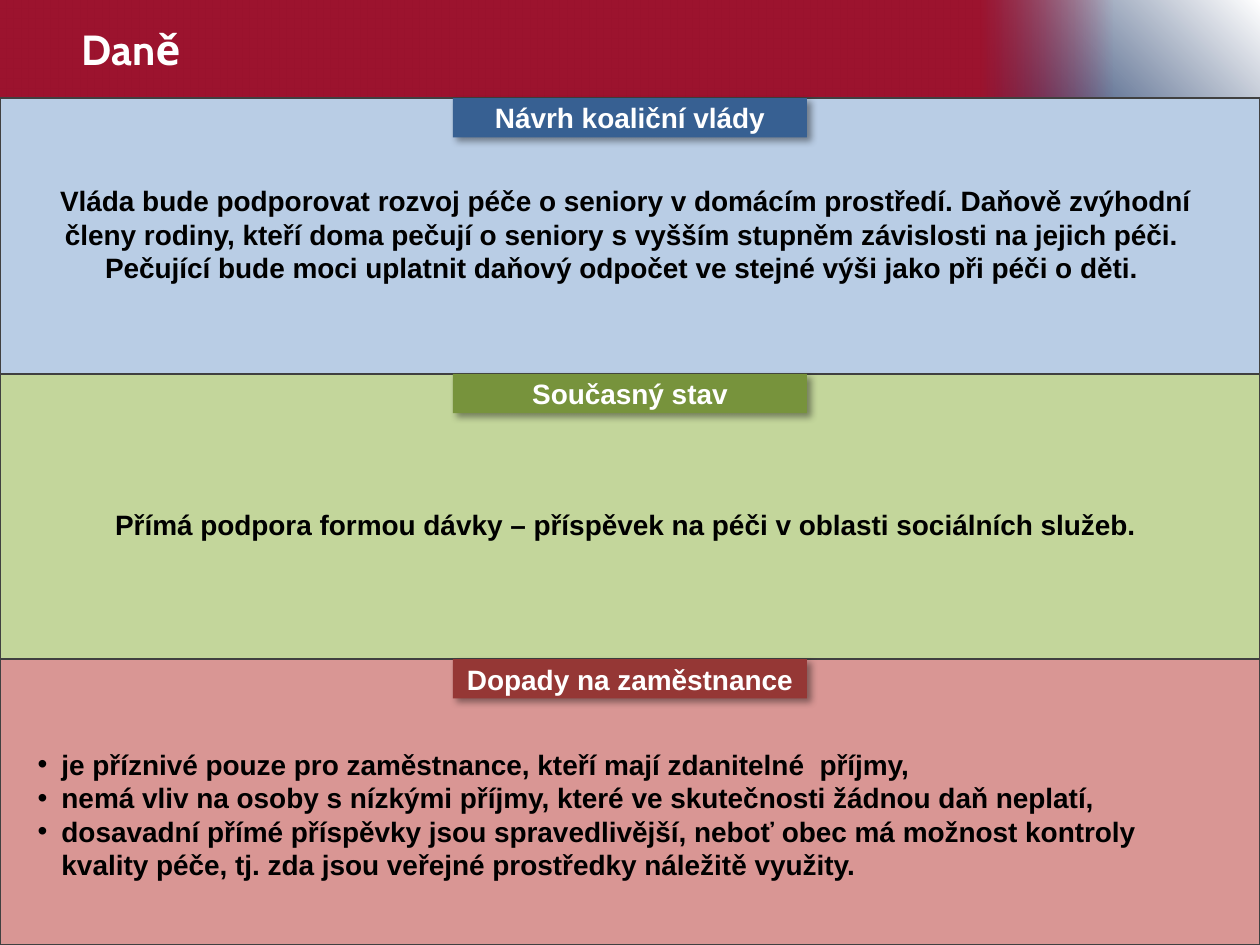
import pptx
import pptx.dml.color
import pptx.enum.shapes
import pptx.enum.text
import pptx.oxml
import pptx.oxml.ns
import pptx.util
from dataclasses import dataclass

Cm = pptx.util.Cm
RGB = pptx.dml.color.RGBColor.from_string
ALIGN = pptx.enum.text.PP_ALIGN
MIDDLE = pptx.enum.text.MSO_ANCHOR.MIDDLE
RECTANGLE = pptx.enum.shapes.MSO_SHAPE.RECTANGLE
NS = pptx.oxml.ns.nsdecls("a")
qn = pptx.oxml.ns.qn


@dataclass(frozen=True)
class Theme:
    white: str = "FFFFFF"
    black: str = "000000"
    outline: str = "404040"
    navy: str = "112D5F"
    crimson: str = "9C132E"
    crimson_end: str = "BA1637"
    body_font: str = "Arial"
    title_font: str = "Cabin"
    body_size: int = 16
    title_size: int = 24


theme = Theme()


def set_gradient(fill, owner, stops, direction):
    fill.gradient()
    old = next(owner.iter(qn("a:gradFill")))
    stop_xml = "".join(
        f'<a:gs pos="{pos * 1000}"><a:srgbClr val="{color}">'
        f'<a:alpha val="{alpha * 1000}"/></a:srgbClr></a:gs>'
        for pos, color, alpha in stops
    )
    new = pptx.oxml.parse_xml(
        f'<a:gradFill {NS} rotWithShape="1"><a:gsLst>{stop_xml}</a:gsLst>{direction}</a:gradFill>'
    )
    old.getparent().replace(old, new)


def style_paragraph(paragraph, color, align, size=theme.body_size, face=theme.body_font):
    paragraph.alignment = align
    paragraph.font.name = face
    paragraph.font.size = pptx.util.Pt(size)
    paragraph.font.bold = True
    paragraph.font.color.rgb = RGB(color)


deck = pptx.Presentation()
deck.slide_width, deck.slide_height = Cm(25.4), Cm(19.05)
slide = deck.slides.add_slide(deck.slide_layouts[6])
shapes = slide.shapes

set_gradient(
    slide.background.fill, slide.element,
    [(0, theme.white, 0), (18, theme.navy, 100)],
    '<a:path path="circle"><a:fillToRect l="100000" b="100000"/></a:path>',
)

header = shapes.add_shape(RECTANGLE, 0, 0, Cm(22.43), Cm(1.98))
header.shadow.inherit = False
header.line.fill.background()
set_gradient(
    header.fill, header.element,
    [(88, theme.crimson, 100), (100, theme.crimson_end, 0)],
    '<a:lin ang="0" scaled="0"/>',
)

title = shapes.add_textbox(Cm(1.4), Cm(0.2), Cm(20.96), Cm(1.57)).text_frame
title.word_wrap = True
title.vertical_anchor = MIDDLE
title.text = "Daně"
style_paragraph(title.paragraphs[0], theme.white, ALIGN.LEFT, theme.title_size, theme.title_font)

sections = [
    ("Návrh koaliční vlády", "B9CDE5", "376092", 1.98, 7.54, (0.41, 3.58, 2.31), False, [
        "Vláda bude podporovat rozvoj péče o seniory v domácím prostředí. "
        "Daňově zvýhodní členy rodiny, kteří doma pečují o seniory s vyšším "
        "stupněm závislosti na jejich péči. \n"
        "Pečující bude moci uplatnit daňový odpočet ve stejné výši jako při péči o děti. ",
    ]),
    ("Současný stav", "C3D69B", "77933C", 7.54, 13.29, (0.41, 10.11, 0.94), False, [
        "Přímá podpora formou dávky – příspěvek na péči v oblasti sociálních služeb.",
    ]),
    ("Dopady na zaměstnance", "D99694", "953735", 13.29, 19.05, (0.51, 14.94, 2.97), True, [
        "je příznivé pouze pro zaměstnance, kteří mají zdanitelné  příjmy,",
        "nemá vliv na osoby s nízkými příjmy, které ve skutečnosti žádnou daň neplatí,",
        "dosavadní přímé příspěvky jsou spravedlivější, neboť obec má možnost kontroly "
        "kvality péče, tj. zda jsou veřejné prostředky náležitě využity.",
    ]),
]

for heading, panel_color, tag_color, top, bottom, body_place, bulleted, lines in sections:
    panel = shapes.add_shape(RECTANGLE, 0, Cm(top), deck.slide_width, Cm(bottom - top))
    panel.shadow.inherit = False
    panel.fill.solid()
    panel.fill.fore_color.rgb = RGB(panel_color)
    panel.line.color.rgb = RGB(theme.outline)
    panel.line.width = pptx.util.Pt(1)

    tag = shapes.add_shape(RECTANGLE, Cm(9.13), Cm(top), Cm(7.14), Cm(0.79))
    tag.fill.solid()
    tag.fill.fore_color.rgb = RGB(tag_color)
    tag.line.fill.background()
    tag.shadow.inherit = False
    next(tag.element.iter(qn("a:effectLst"))).append(pptx.oxml.parse_xml(
        f'<a:outerShdw {NS} blurRad="50800" dist="38100" dir="2700000" algn="tl" rotWithShape="0">'
        f'<a:srgbClr val="{theme.black}"><a:alpha val="40000"/></a:srgbClr></a:outerShdw>'
    ))
    tag.text_frame.vertical_anchor = MIDDLE
    tag.text_frame.word_wrap = True
    tag.text_frame.text = heading
    style_paragraph(tag.text_frame.paragraphs[0], theme.white, ALIGN.CENTER)

    left, body_top, height = body_place
    body = shapes.add_textbox(Cm(left), Cm(body_top), Cm(24.41), Cm(height)).text_frame
    body.word_wrap = True
    body.auto_size = pptx.enum.text.MSO_AUTO_SIZE.SHAPE_TO_FIT_TEXT
    for index, line in enumerate(lines):
        paragraph = body.add_paragraph() if index else body.paragraphs[0]
        paragraph.text = line
        if bulleted:
            properties = paragraph._p.get_or_add_pPr()
            properties.set("marL", str(Cm(0.48)))
            properties.set("indent", str(-Cm(0.48)))
            properties.append(pptx.oxml.parse_xml(f'<a:buFont {NS} typeface="{theme.body_font}"/>'))
            properties.append(pptx.oxml.parse_xml(f'<a:buChar {NS} char="•"/>'))
        style_paragraph(paragraph, theme.black, ALIGN.LEFT if bulleted else ALIGN.CENTER)

deck.save("out.pptx")
